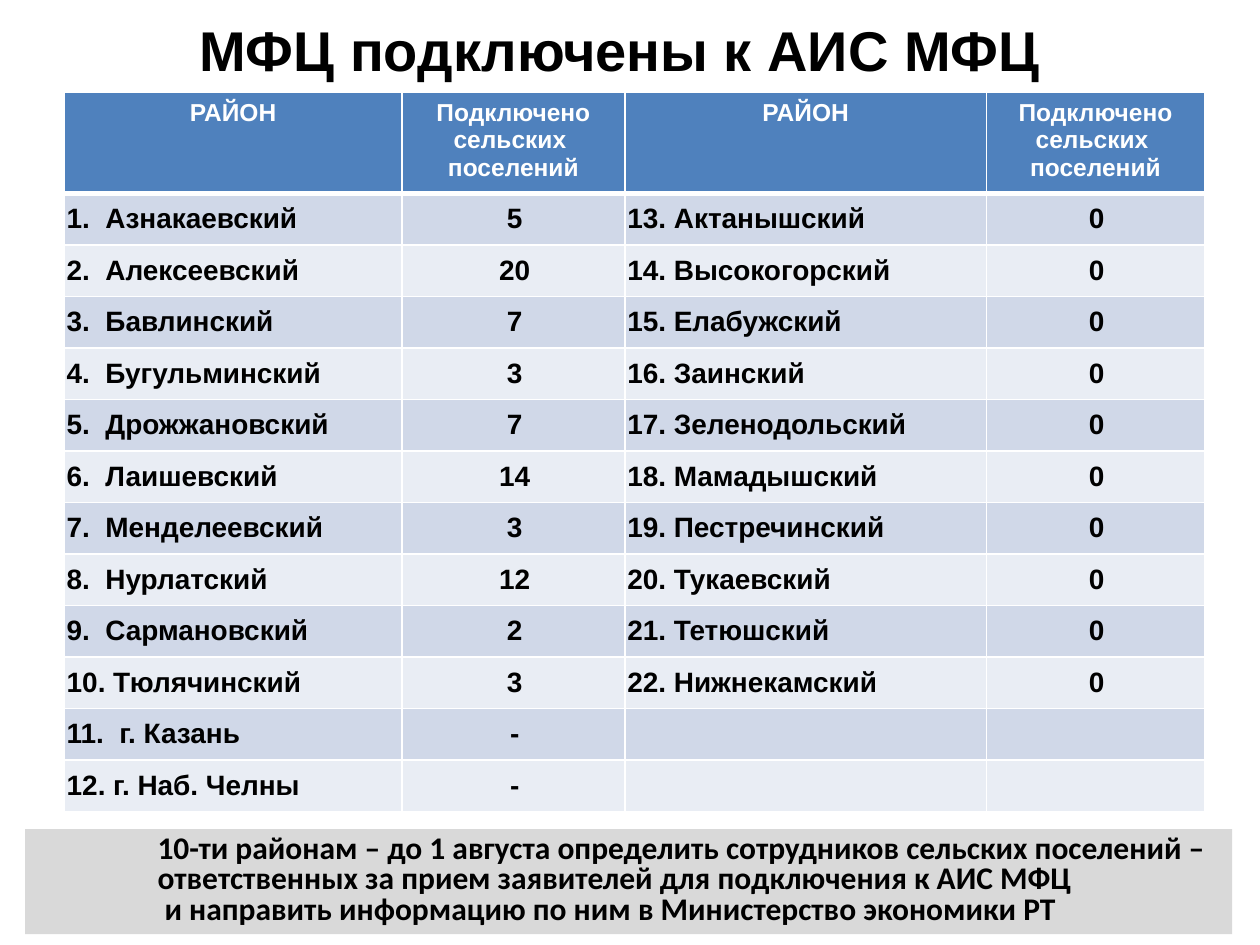
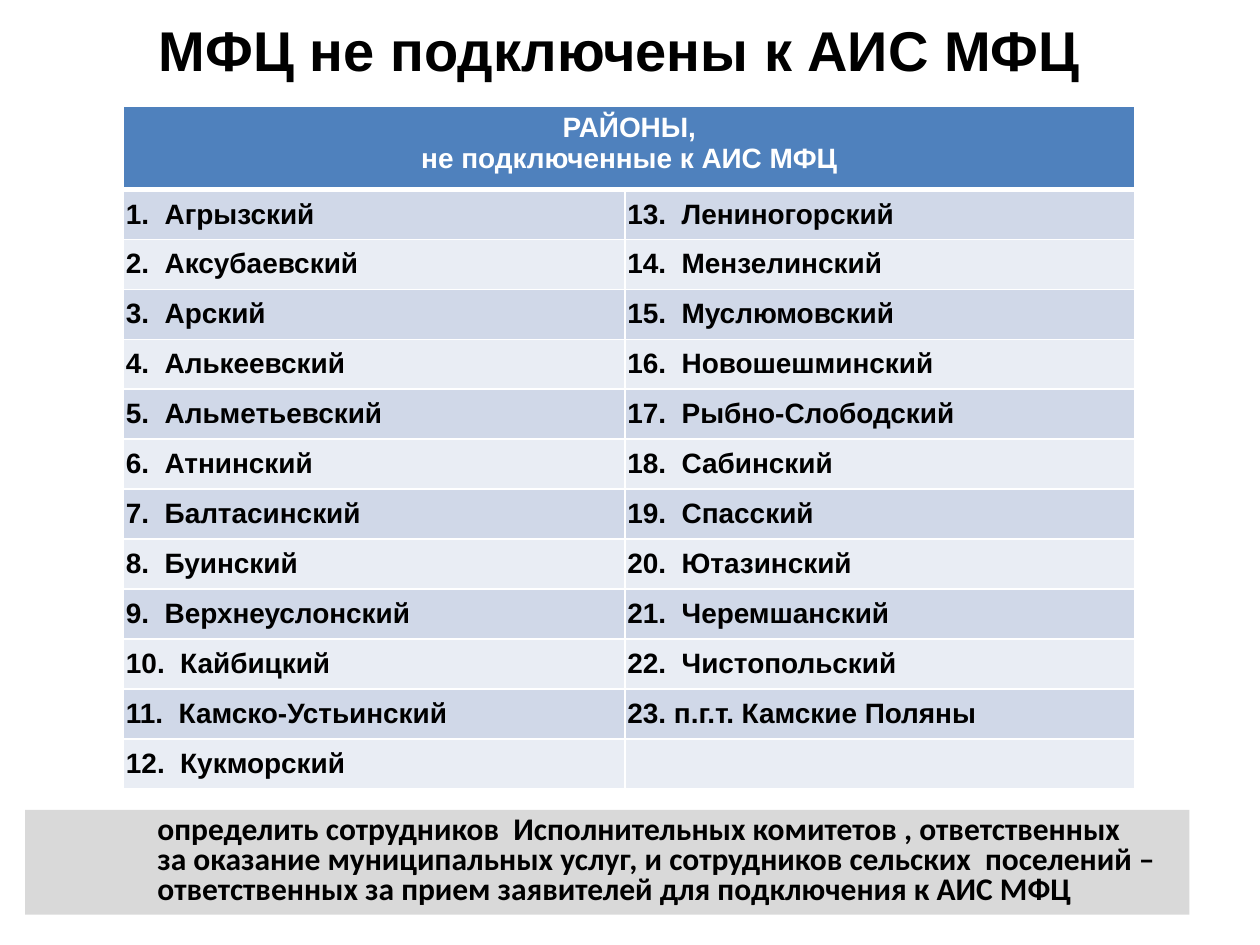
from lxml import etree
from pptx import Presentation
from pptx import util as u
from pptx.dml.color import RGBColor
from pptx.enum import shapes, text
from pptx.oxml.ns import qn

# Shared style
SLIDE_WIDTH, SLIDE_HEIGHT = u.Inches(10), u.Inches(7.5)
BLACK, WHITE = "000000", "FFFFFF"
HEADER_BLUE, NOTE_GREY = "4F81BD", "D9D9D9"
BANDS = ("D0D8E8", "E9EDF4")
LEFT, CENTER = text.PP_ALIGN.LEFT, text.PP_ALIGN.CENTER
NOTE_INDENT = 9.5

# Slide 1: connected districts
CONNECTED = [
    "Азнакаевский", "Алексеевский", "Бавлинский", "Бугульминский",
    "Дрожжановский", "Лаишевский", "Менделеевский", "Нурлатский",
    "Сармановский", "Тюлячинский", "г. Казань", "г. Наб. Челны",
    "Актанышский", "Высокогорский", "Елабужский", "Заинский",
    "Зеленодольский", "Мамадышский", "Пестречинский", "Тукаевский",
    "Тетюшский", "Нижнекамский",
]
SETTLEMENTS = ["5", "20", "7", "3", "7", "14", "3", "12", "2", "3", "-", "-"] + ["0"] * 10
CONNECTED_NOTE = [
    "10-ти районам – до 1 августа определить сотрудников сельских поселений –",
    "ответственных за прием заявителей для подключения к АИС МФЦ",
    " и направить информацию по ним в Министерство экономики РТ",
]

# Slide 2: districts still to be connected
UNCONNECTED = [
    "Агрызский", "Аксубаевский", "Арский", "Алькеевский", "Альметьевский",
    "Атнинский", "Балтасинский", "Буинский", "Верхнеуслонский", "Кайбицкий",
    "Камско-Устьинский", "Кукморский", "Лениногорский", "Мензелинский",
    "Муслюмовский", "Новошешминский", "Рыбно-Слободский", "Сабинский",
    "Спасский", "Ютазинский", "Черемшанский", "Чистопольский",
    "п.г.т. Камские Поляны",
]
UNCONNECTED_NOTE = [
    "определить сотрудников  Исполнительных комитетов , ответственных",
    "за оказание муниципальных услуг, и сотрудников сельских  поселений –",
    "ответственных за прием заявителей для подключения к АИС МФЦ",
]


def color(hex_string):
    return RGBColor.from_string(hex_string)


def across(percent):
    return round(SLIDE_WIDTH * percent / 100)


def down(percent):
    return round(SLIDE_HEIGHT * percent / 100)


def area(left, top, width, height):
    """Percent shares of the slide as a position and size."""
    return across(left), down(top), across(width), down(height)


def write(frame, lines, size, ink=BLACK, font="Arial", align=LEFT, spacing=None):
    for index, line in enumerate(lines):
        paragraph = frame.paragraphs[0] if index == 0 else frame.add_paragraph()
        paragraph.text = line
        paragraph.alignment = align
        paragraph.line_spacing = spacing
        paragraph.font.name = font
        paragraph.font.size = u.Pt(size)
        paragraph.font.bold = True
        paragraph.font.color.rgb = color(ink)


def add_title(slide, title):
    frame = slide.shapes.add_textbox(*area(6.7, 0, 85, 10.5)).text_frame
    frame.word_wrap = True
    frame.vertical_anchor = text.MSO_ANCHOR.MIDDLE
    write(frame, [title], 32, align=CENTER)


def add_note(slide, lines, top, width):
    band = slide.shapes.add_shape(
        shapes.MSO_SHAPE.RECTANGLE, *area(2, top, width, 11.1))
    band.shadow.inherit = False
    band.fill.solid()
    band.fill.fore_color.rgb = color(NOTE_GREY)
    band.line.fill.background()
    frame = band.text_frame
    frame.word_wrap = True
    frame.margin_left = across(1 + NOTE_INDENT)
    frame.vertical_anchor = text.MSO_ANCHOR.TOP
    write(frame, lines, 18, font="Calibri", spacing=0.8)


def add_borders(cell, bottom):
    properties = cell._tc.get_or_add_tcPr()
    for side, width in (("L", 1), ("R", 1), ("T", 1), ("B", bottom)):
        line = etree.SubElement(properties, qn(f"a:ln{side}"), w=str(u.Pt(width)))
        fill = etree.SubElement(line, qn("a:solidFill"))
        etree.SubElement(fill, qn("a:srgbClr"), val=WHITE)


def style_cell(cell, fill, bottom=1):
    add_borders(cell, bottom)
    cell.fill.solid()
    cell.fill.fore_color.rgb = color(fill)


def add_banded_table(slide, left, top, widths, header_height, row_height,
                     headers, header_size, rows):
    """Blue header over banded rows; a single header spans every column."""
    height = header_height + row_height * len(rows)
    table = slide.shapes.add_table(
        len(rows) + 1, len(widths), *area(left, top, sum(widths), height)).table
    for column, width in zip(table.columns, widths):
        column.width = across(width)
    for row in table.rows:
        row.height = down(row_height)
    table.rows[0].height = down(header_height)

    # Header
    for cell in table.rows[0].cells:
        style_cell(cell, HEADER_BLUE, bottom=3)
    if len(headers) == 1:
        table.cell(0, 0).merge(table.cell(0, len(widths) - 1))
    for index, lines in enumerate(headers):
        write(table.cell(0, index).text_frame, lines, header_size, WHITE, align=CENTER)

    # Body: numbered names on the left, counts centred
    for row_index, values in enumerate(rows, start=1):
        for column_index, value in enumerate(values):
            cell = table.cell(row_index, column_index)
            style_cell(cell, BANDS[(row_index - 1) % 2])
            cell.vertical_anchor = text.MSO_ANCHOR.MIDDLE
            cell.margin_left = across(0.2)
            cell.margin_right = cell.margin_top = cell.margin_bottom = 0
            is_count = len(widths) == 4 and column_index % 2 == 1
            write(cell.text_frame, [value], 16, align=CENTER if is_count else LEFT)


def numbered(names, narrow):
    """Number the names; those in narrow have one space after the number."""
    return [f"{number}.{' ' if number in narrow else '  '}{name}"
            for number, name in enumerate(names, start=1)]


def two_halves(records, row_count=12):
    """Lay records out down the left half, then down the right half."""
    blank = ("",) * len(records[0])
    padded = records + [blank] * (2 * row_count - len(records))
    return [a + b for a, b in zip(padded[:row_count], padded[row_count:])]


def main():
    presentation = Presentation()
    presentation.slide_width, presentation.slide_height = SLIDE_WIDTH, SLIDE_HEIGHT
    blank_layout = presentation.slide_layouts[6]

    # Connected districts
    slide = presentation.slides.add_slide(blank_layout)
    add_title(slide, "МФЦ подключены к АИС МФЦ")
    names = numbered(CONNECTED, narrow={10, *range(12, 23)})
    add_banded_table(
        slide, 5.1, 9.8, [26.8, 17.7, 28.7, 17.3], 9.9, 5.45,
        [["РАЙОН"], ["Подключено сельских ", "поселений"]] * 2, 14,
        two_halves(list(zip(names, SETTLEMENTS))))
    add_note(slide, CONNECTED_NOTE, 87.75, 95.8)

    # Districts still to be connected
    slide = presentation.slides.add_slide(blank_layout)
    add_title(slide, "МФЦ не подключены к АИС МФЦ")
    add_banded_table(
        slide, 9.8, 11.2, [39.8, 40.5], 8.84, 5.29,
        [["РАЙОНЫ,", "не подключенные к АИС МФЦ"]], 16,
        two_halves([(name,) for name in numbered(UNCONNECTED, narrow={23})]))
    add_note(slide, UNCONNECTED_NOTE, 85.7, 92.4)

    presentation.save("out.pptx")


if __name__ == "__main__":
    main()
